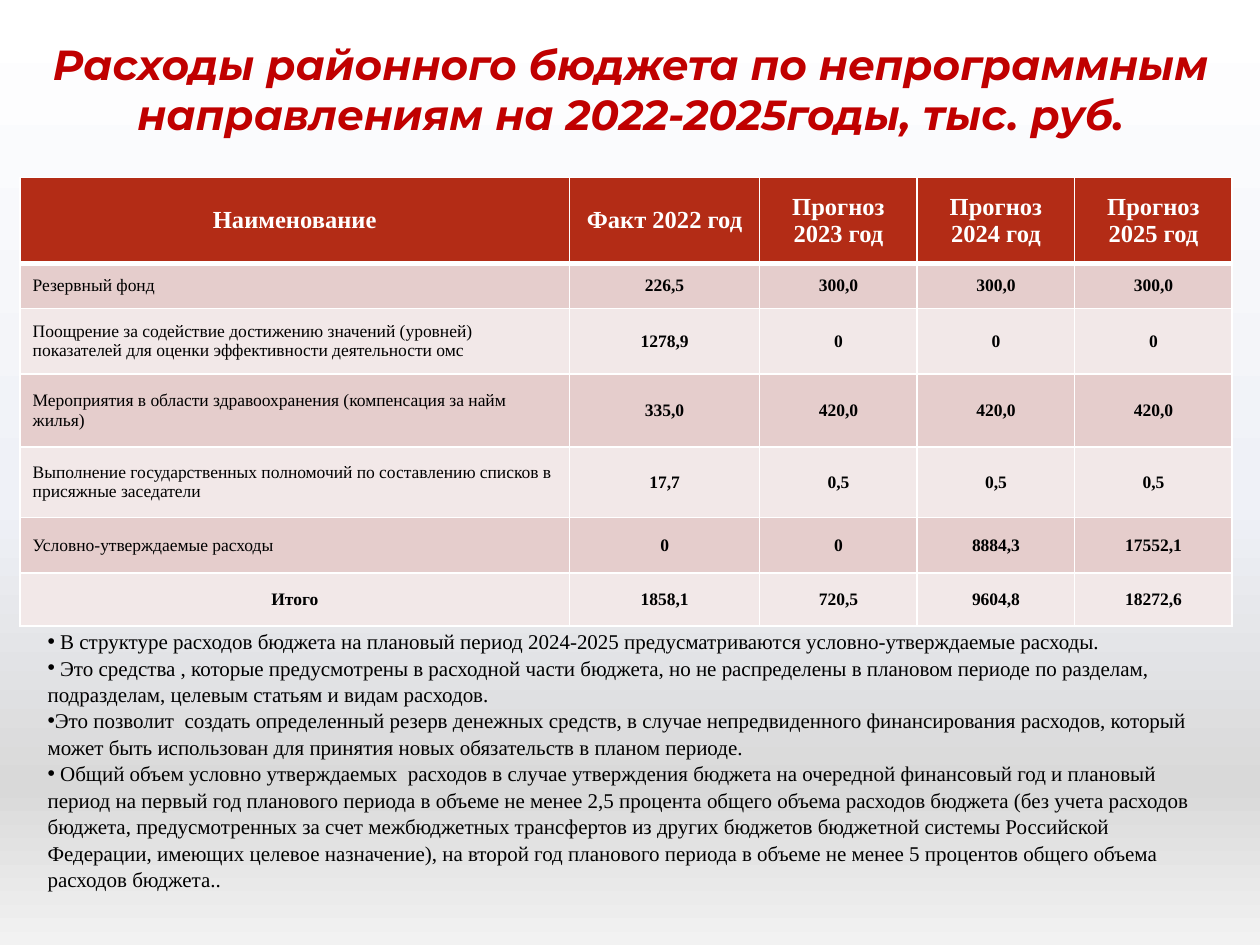
from lxml.etree import SubElement
from pptx import Presentation
from pptx.dml.color import RGBColor
from pptx.enum.text import MSO_ANCHOR, PP_ALIGN
from pptx.oxml.ns import qn
from pptx.util import Inches, Pt

# Content
TITLE = "Расходы районного бюджета по непрограммным направлениям на 2022-2025годы, тыс. руб."
ROWS = [
    ("Наименование", "Факт 2022 год", "Прогноз 2023 год", "Прогноз 2024 год", "Прогноз 2025 год"),
    ("Резервный фонд", "226,5", "300,0", "300,0", "300,0"),
    ("Поощрение за содействие достижению значений (уровней) показателей для оценки "
     "эффективности деятельности омс", "1278,9", "0", "0", "0"),
    ("Мероприятия в области здравоохранения (компенсация за найм жилья)",
     "335,0", "420,0", "420,0", "420,0"),
    ("Выполнение государственных полномочий по составлению списков в присяжные заседатели",
     "17,7", "0,5", "0,5", "0,5"),
    ("Условно-утверждаемые расходы", "0", "0", "8884,3", "17552,1"),
    ("Итого", "1858,1", "720,5", "9604,8", "18272,6"),
]
NOTES = [
    " В структуре расходов бюджета на плановый период 2024-2025 предусматриваются "
    "условно-утверждаемые расходы.",
    " Это средства , которые предусмотрены в расходной части бюджета, но не распределены "
    "в плановом периоде по разделам, подразделам, целевым статьям и видам расходов.",
    "Это позволит  создать определенный резерв денежных средств, в случае непредвиденного "
    "финансирования расходов, который может быть использован для принятия новых обязательств "
    "в планом периоде.",
    " Общий объем условно утверждаемых  расходов в случае утверждения бюджета на очередной "
    "финансовый год и плановый период на первый год планового периода в объеме не менее "
    "2,5 процента общего объема расходов бюджета (без учета расходов бюджета, предусмотренных "
    "за счет межбюджетных трансфертов из других бюджетов бюджетной системы Российской Федерации, "
    "имеющих целевое назначение), на второй год планового периода в объеме не менее 5 процентов "
    "общего объема расходов бюджета..",
]

# Style
COLUMN_WIDTHS = [4.36, 1.51, 1.25, 1.25, 1.25]
ROW_HEIGHTS = [0.68, 0.36, 0.52, 0.58, 0.56, 0.44, 0.42]
BACKGROUND = [(0, "FFFFFF"), (53, "EFF1F7"), (83, "D9D9D9"), (100, "F2F2F2")]
SERIF = "Times New Roman"
RED = RGBColor(0xC0, 0x00, 0x00)
BRICK = RGBColor(0xB3, 0x2C, 0x16)
BANDS = [RGBColor(0xF2, 0xE8, 0xE8), RGBColor(0xE5, 0xCD, 0xCC)]
WHITE = RGBColor(0xFF, 0xFF, 0xFF)
BLACK = RGBColor(0, 0, 0)


def set_font(para, name, size, color, bold=False, italic=False):
    font = para.font
    font.name, font.size, font.bold, font.italic = name, Pt(size), bold, italic
    font.color.rgb = color


def add_color(parent, value):
    SubElement(parent, qn("a:srgbClr"), val=str(value))


def set_borders(cell, widths):
    properties = cell._tc.get_or_add_tcPr()
    for index, (side, width) in enumerate(widths.items()):
        line = SubElement(properties, qn(f"a:ln{side}"), w=str(Pt(width)))
        add_color(SubElement(line, qn("a:solidFill")), WHITE)
        properties.insert(index, line)


def add_box(page, left, top, width, height):
    box = page.shapes.add_textbox(Inches(left), Inches(top), Inches(width), Inches(height))
    box.text_frame.word_wrap = True
    return box.text_frame


deck = Presentation()
deck.slide_width, deck.slide_height = Inches(10), Inches(7.5)
page = deck.slides.add_slide(deck.slide_layouts[6])

# Background gradient, top to bottom
fill = page.background.fill
fill.gradient()
fill.gradient_angle = 270
stops = next(page.element.iter(qn("a:gsLst")))
for stop in list(stops):
    stops.remove(stop)
for position, color in BACKGROUND:
    add_color(SubElement(stops, qn("a:gs"), pos=str(position * 1000)), color)

# Title
frame = add_box(page, 0.16, 0.16, 9.69, 1.09)
frame.vertical_anchor = MSO_ANCHOR.MIDDLE
para = frame.paragraphs[0]
para.text = TITLE
para.alignment = PP_ALIGN.CENTER
set_font(para, "Montserrat", 24, RED, bold=True, italic=True)

# Budget table
table = page.shapes.add_table(
    len(ROWS), len(COLUMN_WIDTHS), Inches(0.16), Inches(1.41),
    Inches(sum(COLUMN_WIDTHS)), Inches(sum(ROW_HEIGHTS))).table
for column, width in zip(table.columns, COLUMN_WIDTHS):
    column.width = Inches(width)
for row, height in zip(table.rows, ROW_HEIGHTS):
    row.height = Inches(height)

for r, values in enumerate(ROWS):
    header, total = r == 0, r == len(ROWS) - 1
    for c, value in enumerate(values):
        cell = table.cell(r, c)
        cell.vertical_anchor = MSO_ANCHOR.MIDDLE
        cell.fill.solid()
        cell.fill.fore_color.rgb = BRICK if header else BANDS[r % 2]
        set_borders(cell, {"L": 1, "R": 1, "T": 3 if r == 1 else 1, "B": 3 if header else 1})
        para = cell.text_frame.paragraphs[0]
        para.text = value
        label = c == 0 and not header and not total
        para.alignment = PP_ALIGN.LEFT if label else PP_ALIGN.CENTER
        set_font(para, SERIF, 14 if header else 10, WHITE if header else BLACK, bold=not label)

# Explanatory notes
frame = add_box(page, 0.28, 4.93, 9.37, 2.12)
for index, note in enumerate(NOTES):
    para = frame.paragraphs[0] if index == 0 else frame.add_paragraph()
    para.text = note
    para.line_spacing = 1.05
    properties = para._p.get_or_add_pPr()
    SubElement(properties, qn("a:buFont"), typeface="Arial")
    SubElement(properties, qn("a:buChar"), char="•")
    set_font(para, SERIF, 12, BLACK)

deck.save("out.pptx")
